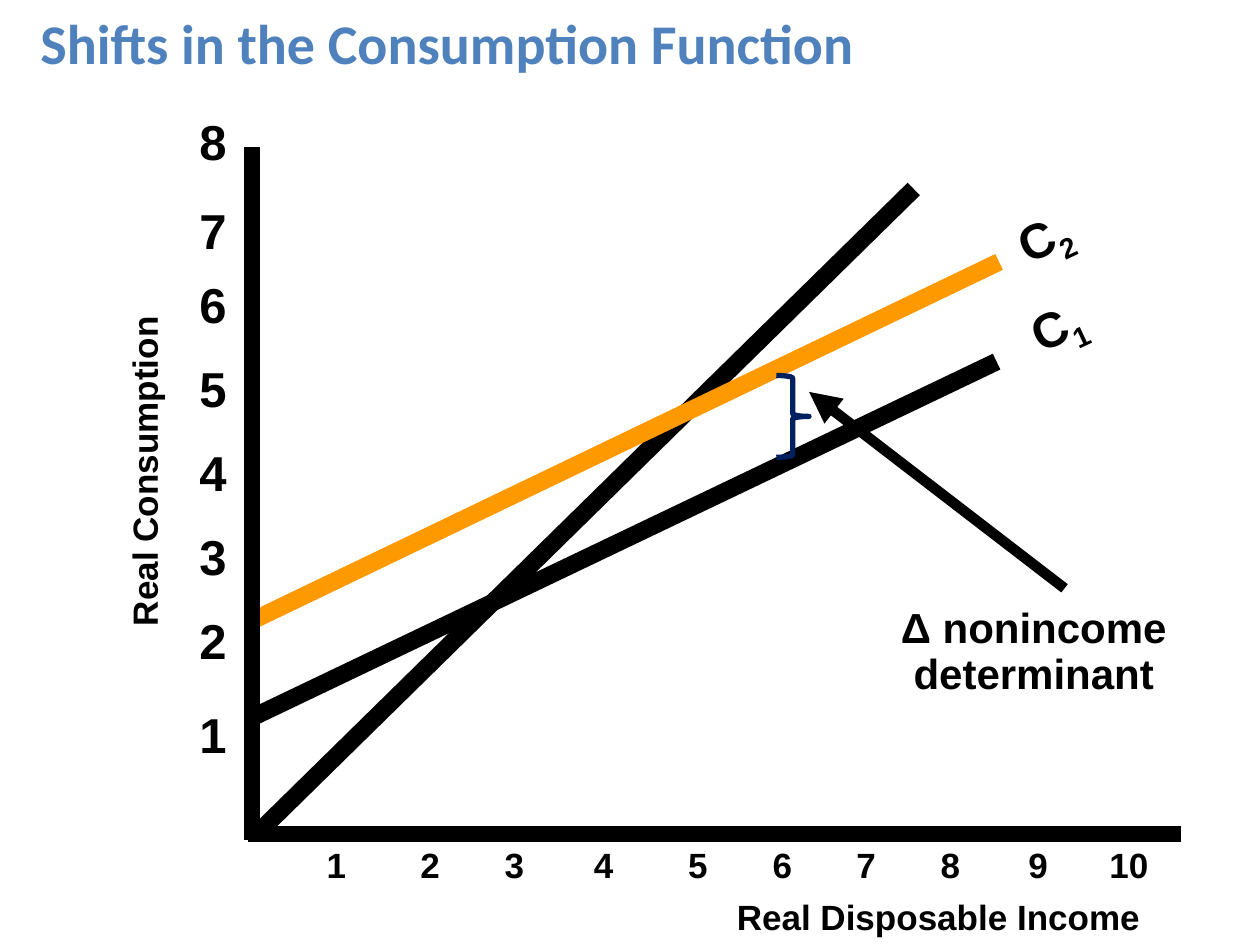
from dataclasses import dataclass

from lxml.etree import SubElement
from pptx import Presentation
from pptx.dml.color import RGBColor
from pptx.enum.shapes import MSO_CONNECTOR as Connector, MSO_SHAPE as Shape
from pptx.enum.text import MSO_ANCHOR as Anchor, PP_ALIGN as Align
from pptx.oxml.ns import qn
from pptx.util import Cm, Pt


@dataclass(frozen=True)
class Theme:
    """Colours, fonts and type sizes of the slide."""
    ink: str = "000000"
    heading: str = "4F81BD"
    shifted: str = "FF9900"
    brace: str = "002060"
    heading_font: str = "Calibri"
    label_font: str = "Arial"
    heading_size: int = 32
    large: int = 28
    medium: int = 24
    small: int = 20
    curve: int = 10
    axis: int = 9
    pointer: int = 6


@dataclass(frozen=True)
class Box:
    """A region in centimetres."""
    left: float
    top: float
    width: float
    height: float

    def inner(self, dx, dy, width, height):
        """Return a box offset from this one's top left corner."""
        return Box(self.left + dx, self.top + dy, width, height)

    def lengths(self):
        """Return left, top, width and height as lengths."""
        return [Cm(side) for side in (self.left, self.top, self.width, self.height)]


THEME = Theme()


def write(frame, runs, size, font=THEME.label_font, color=THEME.ink,
          align=Align.CENTER, anchor=Anchor.TOP):
    """Fill a text frame with bold runs given as (text, baseline) pairs."""
    frame.word_wrap = True
    frame.vertical_anchor = anchor
    paragraph = frame.paragraphs[0]
    paragraph.alignment = align
    paragraph.line_spacing = 0.9
    for text, baseline in runs:
        run = paragraph.add_run()
        run.text = text
        run.font.name = font
        run.font.size = Pt(size)
        run.font.bold = True
        run.font.color.rgb = RGBColor.from_string(color)
        if baseline:
            run.font._element.set("baseline", str(baseline * 1000))


def add_label(slide, box, runs, size, align=Align.CENTER, rotation=0):
    """Add a text label in the given box."""
    label = slide.shapes.add_textbox(*box.lengths())
    label.rotation = rotation
    write(label.text_frame, runs, size, align=align)


def add_line(slide, box, start, end, width, color=THEME.ink, arrow=False):
    """Draw a straight line between two points relative to the box."""
    ends = [Cm(base + offset) for point in (start, end)
            for base, offset in zip((box.left, box.top), point)]
    line = slide.shapes.add_connector(Connector.STRAIGHT, *ends)
    line.line.width = Pt(width)
    line.line.color.rgb = RGBColor.from_string(color)
    if arrow:
        SubElement(line.line._get_or_add_ln(), qn("a:tailEnd"), type="triangle")
    SubElement(line._element.spPr, qn("a:effectLst"))


def build_title(slide, box):
    """Place the slide title."""
    title = slide.shapes.title
    title.left, title.top, title.width, title.height = box.lengths()
    write(title.text_frame, [("Shifts in the Consumption Function", 0)],
          THEME.heading_size, THEME.heading_font, THEME.heading, Align.LEFT)


def build_scales(slide, box):
    """Number and name both axes."""
    consumption_tops = (11.25, 9.35, 7.65, 5.95, 4.27, 2.57, 1.09, -0.71)
    for value, top in enumerate(consumption_tops, 1):
        add_label(slide, box.inner(-3.23, top, 2.97, 1.32), [(str(value), 0)],
                  THEME.large, Align.RIGHT)
    income_centers = (1.7, 3.59, 5.29, 7.09, 8.99, 10.69, 12.38, 14.08, 15.85, 17.68)
    for value, center in enumerate(income_centers, 1):
        add_label(slide, box.inner(center - 1.17, 14, 2.34, 1.02),
                  [(str(value), 0)], THEME.small)
    add_label(slide, box.inner(-6.25, 6.02, 8.26, 1.02),
              [("Real Consumption", 0)], THEME.small, rotation=270)
    add_label(slide, box.inner(8.86, 15.06, 9.96, 1.02),
              [("Real Disposable Income", 0)], THEME.small)


def build_curves(slide, box):
    """Draw the 45-degree line, both consumption curves and the axes."""
    add_line(slide, box, (0.2, 13.74), (13.34, 0.84), THEME.curve)
    add_line(slide, box, (0.03, 9.53), (15.06, 2.31), THEME.curve, THEME.shifted)
    add_line(slide, box, (-0.03, 11.51), (15.01, 4.32), THEME.curve)
    add_line(slide, box, (-0.08, box.height), (box.width, box.height), THEME.axis)
    add_line(slide, box, (0, 0), (0, box.height + 0.13), THEME.axis)
    for number, left, top, width in (("1", 15.42, 2.82, 1.78), ("2", 15.14, 0.99, 2.03)):
        add_label(slide, box.inner(left, top, width, 1.32),
                  [("C", 0), (number, -25)], THEME.large, Align.LEFT, 334.8)


def build_shift_note(slide, box):
    """Mark the gap between the curves and explain it."""
    add_line(slide, box, (16.38, 8.89), (11.23, 4.93), THEME.pointer, arrow=True)
    add_label(slide, box.inner(12.8, 9.15, 5.92, 2.08),
              [("Δ nonincome determinant", 0)], THEME.medium)
    gap = slide.shapes.add_shape(Shape.RIGHT_BRACE,
                                 *box.inner(10.57, 4.6, 0.66, 1.65).lengths())
    gap.shadow.inherit = False
    gap.fill.background()
    gap.line.width = Pt(3)
    gap.line.color.rgb = RGBColor.from_string(THEME.brace)


def main():
    """Build the slide and save it."""
    deck = Presentation()
    deck.slide_width, deck.slide_height = Cm(25.4), Cm(19.05)
    slide = deck.slides.add_slide(deck.slide_layouts[5])
    build_title(slide, Box(0.56, 0.2, 20.75, 1.5))
    graph = Box(5.08, 2.97, 18.72, 13.84)
    for build in (build_scales, build_curves, build_shift_note):
        build(slide, graph)
    deck.save("out.pptx")


if __name__ == "__main__":
    main()
